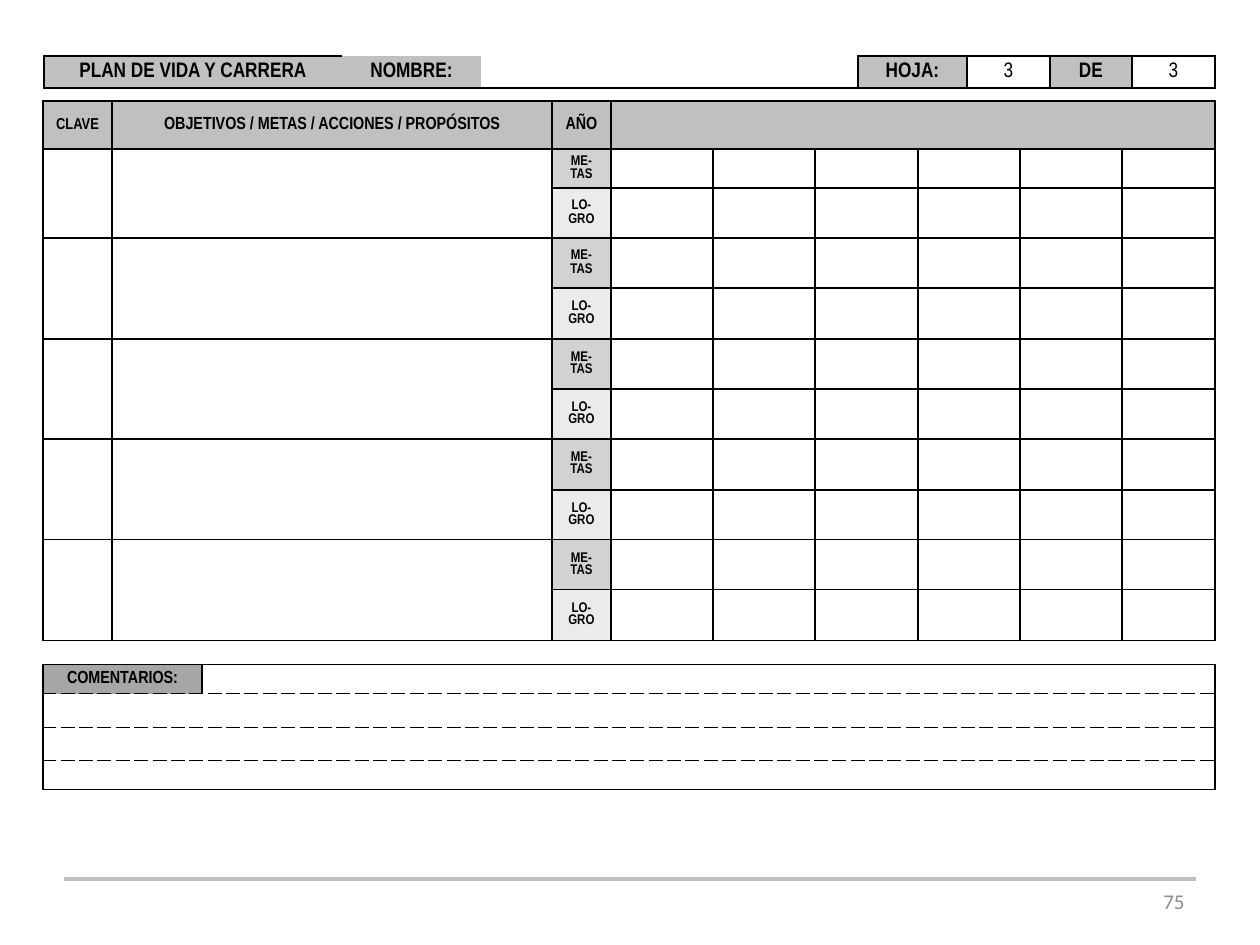
from lxml import etree
from pptx import Presentation
from pptx.dml.color import RGBColor
from pptx.enum.shapes import MSO_CONNECTOR
from pptx.enum.text import MSO_ANCHOR, PP_ALIGN
from pptx.oxml.ns import qn
from pptx.util import Pt

PX = 914400 // 126
MIDDLE = MSO_ANCHOR.MIDDLE
CENTER, RIGHT = PP_ALIGN.CENTER, PP_ALIGN.RIGHT
BLACK = RGBColor(0x00, 0x00, 0x00)
WHITE = RGBColor(0xFF, 0xFF, 0xFF)
HEADING = RGBColor(0xC0, 0xC0, 0xC0)
GOAL = RGBColor(0xA6, 0xA6, 0xA6)
RESULT = RGBColor(0xD9, 0xD9, 0xD9)
RULE = RGBColor(0xBF, 0xBF, 0xBF)
PAGE_NUMBER = RGBColor(0x8C, 0x8C, 0x8C)


def add_grid(s, x, y, cols, rows):
    """Add an unstyled table with the given column widths and row heights."""
    table = s.shapes.add_table(len(rows), len(cols), x * PX, y * PX,
                               sum(cols) * PX, sum(rows) * PX).table
    table.first_row = table.horz_banding = False
    for column, width in zip(table.columns, cols):
        column.width = width * PX
    for row, height in zip(table.rows, rows):
        row.height = height * PX
    return table


def format_cell(cell, fill, text="", size=8, bold=True, spacing=None,
                borders="solid solid solid solid", alpha=None):
    """Set a cell; borders lists left, right, top and bottom."""
    tcPr = cell._tc.get_or_add_tcPr()
    for side, dash in zip("LRTB", borders.split()):
        ln = etree.SubElement(tcPr, qn("a:ln" + side), w=str(Pt(1)))
        if dash == "none":
            etree.SubElement(ln, qn("a:noFill"))
            continue
        color = etree.SubElement(ln, qn("a:solidFill"))
        etree.SubElement(color, qn("a:srgbClr"), val=str(BLACK))
        etree.SubElement(ln, qn("a:prstDash"), val=dash)
    cell.fill.solid()
    cell.fill.fore_color.rgb = fill
    if alpha:
        color = tcPr.find(qn("a:solidFill")).find(qn("a:srgbClr"))
        etree.SubElement(color, qn("a:alpha"), val=str(alpha * 1000))
    cell.margin_left = cell.margin_right = 10 * PX
    cell.margin_top = cell.margin_bottom = 0
    cell.vertical_anchor = MIDDLE
    p = cell.text_frame.paragraphs[0]
    p.text = text
    p.alignment = CENTER
    p.line_spacing = spacing
    p.font.name = "Arial Narrow"
    p.font.size = Pt(size)
    p.font.bold = bold
    p.font.color.rgb = BLACK


prs = Presentation()
prs.slide_width, prs.slide_height = 1260 * PX, 945 * PX
s = prs.slides.add_slide(prs.slide_layouts[6])

# Footer
rule = s.shapes.add_connector(MSO_CONNECTOR.STRAIGHT, 64 * PX, 879 * PX, 1196 * PX, 879 * PX)
rule.line.color.rgb = RULE
rule.line.width = Pt(2)
etree.SubElement(rule._element.spPr, qn("a:effectLst"))

page = s.shapes.add_textbox(903 * PX, 876 * PX, 294 * PX, 50 * PX)
tf = page.text_frame
tf.word_wrap = True
tf.vertical_anchor = MIDDLE
p = tf.paragraphs[0]
p.text = "75"
p.alignment = RIGHT
p.font.name = "Calibri"
p.font.size = Pt(12)
p.font.color.rgb = PAGE_NUMBER

# Plan: heading, five goal/result pairs, a gap and four comment rows
cols = [69, 90, 350, 59, 102, 102, 103, 102, 102, 93]
rows = [48, 39] + [50, 50, 51] * 3 + [24, 29, 34, 33, 29]
GAP, COMMENTS = 11, 12
plan = add_grid(s, 43, 101, cols, rows)

headings = [("CLAVE", 9), ("OBJETIVOS / METAS / ACCIONES / PROPÓSITOS", 10), ("", 10),
            ("AÑO", 10)] + [("", 10)] * 6
for c, (text, size) in enumerate(headings):
    format_cell(plan.cell(0, c), HEADING, text, size)
plan.cell(0, 1).merge(plan.cell(0, 2))
plan.cell(0, 4).merge(plan.cell(0, 9))

for r in range(1, GAP):
    spacing = 0.9 if r >= 5 else None
    text, fill = ("ME-TAS", GOAL) if r % 2 else ("LO-GRO", RESULT)
    for c in range(3):
        format_cell(plan.cell(r, c), WHITE)
    format_cell(plan.cell(r, 3), fill, text, spacing=spacing, alpha=50)
    for c in range(4, len(cols)):
        format_cell(plan.cell(r, c), WHITE, alpha=50)
for r in range(1, GAP, 2):
    plan.cell(r, 0).merge(plan.cell(r + 1, 0))
    plan.cell(r, 1).merge(plan.cell(r + 1, 2))

full_rows = ["none none solid solid", "solid solid solid sysDash", "solid solid sysDash sysDash",
             "solid solid sysDash sysDash", "solid solid sysDash solid"]
for r, borders in enumerate(full_rows, GAP):
    for c in range(len(cols)):
        label = r == COMMENTS and c < 2
        text = "COMENTARIOS:" if label and c == 0 else ""
        format_cell(plan.cell(r, c), GOAL if label else WHITE, text,
                    10 if label else 8, borders=borders)
    if r == COMMENTS:
        plan.cell(r, 0).merge(plan.cell(r, 1))
        plan.cell(r, 2).merge(plan.cell(r, 9))
    else:
        plan.cell(r, 0).merge(plan.cell(r, 9))

# Sheet header
sheet = add_grid(s, 44, 56, [298, 139, 377, 109, 83, 82, 83], [32])
BOXED = "solid solid solid solid"
fields = [("PLAN DE VIDA Y CARRERA", HEADING, True, "solid none solid solid"),
          ("NOMBRE:", HEADING, True, "none none none solid"),
          ("", WHITE, True, "none solid none solid"),
          ("HOJA:", HEADING, True, BOXED), ("3", WHITE, False, BOXED),
          ("DE", HEADING, True, BOXED), ("3", WHITE, False, BOXED)]
for c, (text, fill, bold, borders) in enumerate(fields):
    format_cell(sheet.cell(0, c), fill, text, 12, bold, 0.85, borders)

prs.save("out.pptx")
